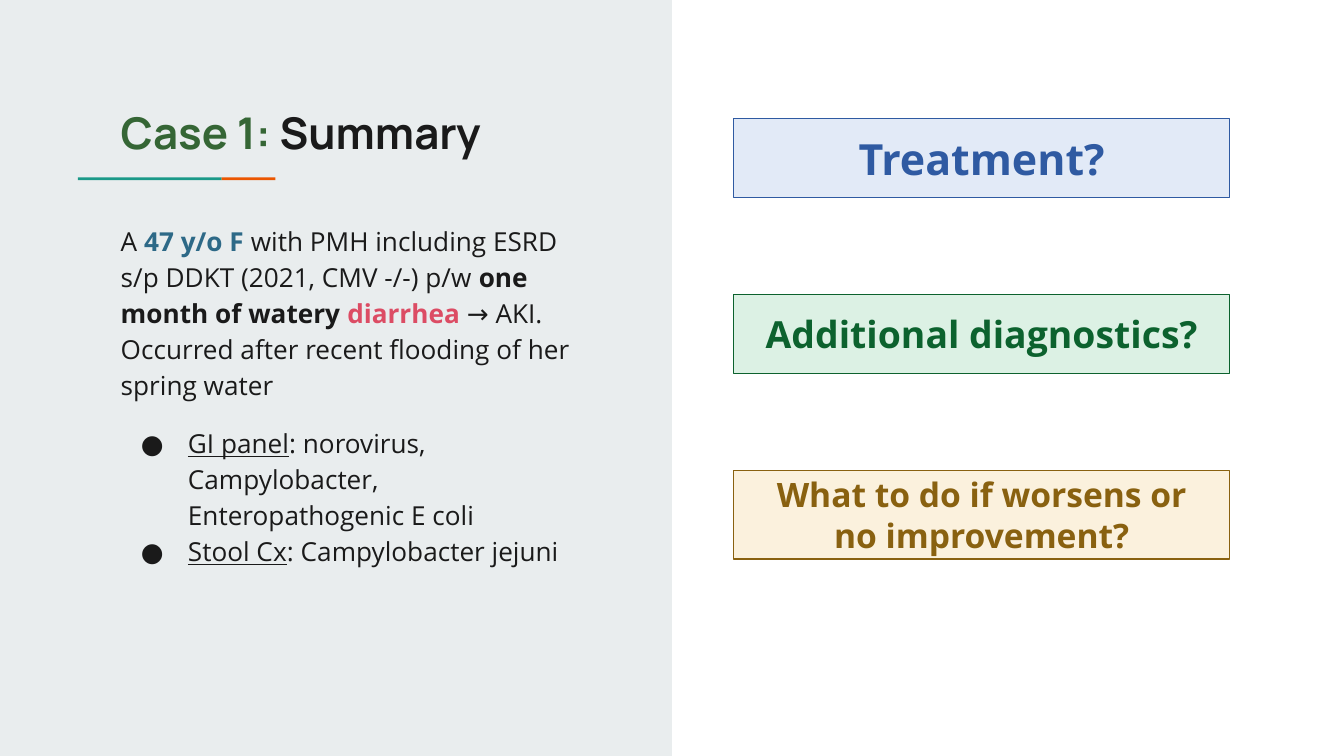
from dataclasses import dataclass
from typing import Optional

from lxml import etree
from pptx import Presentation
from pptx.dml.color import RGBColor
from pptx.enum import shapes, text
from pptx.oxml.ns import qn
from pptx.util import Inches, Pt


@dataclass(frozen=True)
class Theme:
    heading_font: str = "Manrope"
    body_font: str = "Open Sans"
    heading_size: float = 23.4
    body_size: float = 14
    ink: str = "1A1A1A"
    panel: str = "E9EDEE"
    teal: str = "1A9988"
    orange: str = "EB5600"
    green: str = "356635"
    blue: str = "2D6987"
    red: str = "DC4C64"


THEME = Theme()
SLIDE_WIDTH = 10
SLIDE_HEIGHT = SLIDE_WIDTH * 9 / 16


@dataclass(frozen=True)
class Span:
    words: str
    color: str = THEME.ink
    bold: Optional[bool] = None
    underline: Optional[bool] = None


@dataclass(frozen=True)
class Block:
    left: float
    top: float
    width: float
    height: float
    fill: str
    line: Optional[str] = None


@dataclass(frozen=True)
class Question:
    lines: tuple[str, ...]
    size: float
    fill: str
    color: str
    height: float = 0.59


HEADING = (Span("Case 1:", THEME.green), Span(" Summary"))
HISTORY = (
    Span("A "),
    Span("47 y/o F", THEME.blue, bold=True),
    Span(" with PMH including ESRD s/p DDKT (2021, CMV -/-) p/w "),
    Span("one month of watery ", bold=True),
    Span("diarrhea", THEME.red, bold=True),
    Span(" → AKI. Occurred after recent flooding of her spring water"),
)
FINDINGS = (
    (Span("GI panel", underline=True),
     Span(": norovirus, Campylobacter, Enteropathogenic E coli")),
    (Span("Stool Cx", underline=True), Span(": Campylobacter jejuni")),
)
BACKDROP = (
    Block(0, 0, SLIDE_WIDTH / 2, SLIDE_HEIGHT, THEME.panel),
    Block(0.58, 1.32, 1.07, 0.02, THEME.teal),
    Block(1.65, 1.32, 0.4, 0.02, THEME.orange),
)
QUESTIONS = (
    Question(("Treatment?",), 23, "E2EAF7", "2F5AA2"),
    Question(("Additional diagnostics?",), 20, "DCF1E4", "0C622E"),
    Question(("What to do if worsens or", "no improvement?"),
             18, "FBF1DD", "896110", height=0.66),
)
QUESTION_LEFT, QUESTION_TOP, QUESTION_WIDTH, QUESTION_PITCH = 5.46, 0.88, 3.69, 1.31


def rgb(value: str) -> RGBColor:
    return RGBColor.from_string(value)


def set_frame(frame) -> None:
    """Wrap the text and give it equal insets."""
    frame.word_wrap = True
    frame.margin_left = frame.margin_right = Inches(0.1)
    frame.margin_top = frame.margin_bottom = Inches(0.1)


def add_frame(slide, left: float, top: float, width: float, height: float):
    box = slide.shapes.add_textbox(
        Inches(left), Inches(top), Inches(width), Inches(height))
    set_frame(box.text_frame)
    return box.text_frame


def add_block(slide, block: Block):
    rect = slide.shapes.add_shape(
        shapes.MSO_SHAPE.RECTANGLE, Inches(block.left), Inches(block.top),
        Inches(block.width), Inches(block.height))
    rect.shadow.inherit = False
    rect.fill.solid()
    rect.fill.fore_color.rgb = rgb(block.fill)
    if block.line:
        rect.line.color.rgb = rgb(block.line)
        rect.line.width = Pt(0.75)
    else:
        rect.line.fill.background()
    return rect


def write_spans(paragraph, spans: tuple[Span, ...], font: str, size: float) -> None:
    paragraph.font.name = font
    paragraph.font.size = Pt(size)
    for span in spans:
        run = paragraph.add_run()
        run.text = span.words
        run.font.color.rgb = rgb(span.color)
        if span.bold:
            run.font.bold = True
        if span.underline:
            run.font.underline = True


def add_bullet(paragraph) -> None:
    properties = paragraph._p.get_or_add_pPr()
    properties.set("marL", str(Inches(0.5)))
    properties.set("indent", str(Inches(-0.35)))
    color = etree.SubElement(properties, qn("a:buClr"))
    etree.SubElement(color, qn("a:srgbClr"), val=THEME.ink)
    etree.SubElement(properties, qn("a:buSzPts"), val=str(THEME.body_size * 100))
    etree.SubElement(properties, qn("a:buFont"), typeface=THEME.body_font)
    etree.SubElement(properties, qn("a:buChar"), char="●")


def add_heading(slide) -> None:
    paragraph = add_frame(slide, 0.8, 0.69, 4.12, 0.59).paragraphs[0]
    write_spans(paragraph, HEADING, THEME.heading_font, THEME.heading_size)
    paragraph.font.bold = True


def add_summary(slide) -> None:
    frame = add_frame(slide, 0.8, 1.54, 3.69, 3.31)
    history = frame.paragraphs[0]
    history.line_spacing = 1.15
    write_spans(history, HISTORY, THEME.body_font, THEME.body_size)
    for index, finding in enumerate(FINDINGS):
        item = frame.add_paragraph()
        item.line_spacing = 1.15
        item.space_before = Pt(0 if index else 12)
        add_bullet(item)
        write_spans(item, finding, THEME.body_font, THEME.body_size)


def add_question(slide, question: Question, top: float) -> None:
    rect = add_block(slide, Block(QUESTION_LEFT, top, QUESTION_WIDTH,
                                  question.height, question.fill, question.color))
    frame = rect.text_frame
    set_frame(frame)
    frame.vertical_anchor = text.MSO_ANCHOR.MIDDLE
    for index, line in enumerate(question.lines):
        paragraph = frame.add_paragraph() if index else frame.paragraphs[0]
        paragraph.alignment = text.PP_ALIGN.CENTER
        write_spans(paragraph, (Span(line, question.color),),
                    THEME.body_font, question.size)
        paragraph.font.bold = True


def main() -> None:
    deck = Presentation()
    deck.slide_width, deck.slide_height = Inches(SLIDE_WIDTH), Inches(SLIDE_HEIGHT)
    slide = deck.slides.add_slide(deck.slide_layouts[6])
    for block in BACKDROP:
        add_block(slide, block)
    add_summary(slide)
    add_heading(slide)
    for index, question in enumerate(QUESTIONS):
        add_question(slide, question, QUESTION_TOP + index * QUESTION_PITCH)
    deck.save("out.pptx")


if __name__ == "__main__":
    main()
